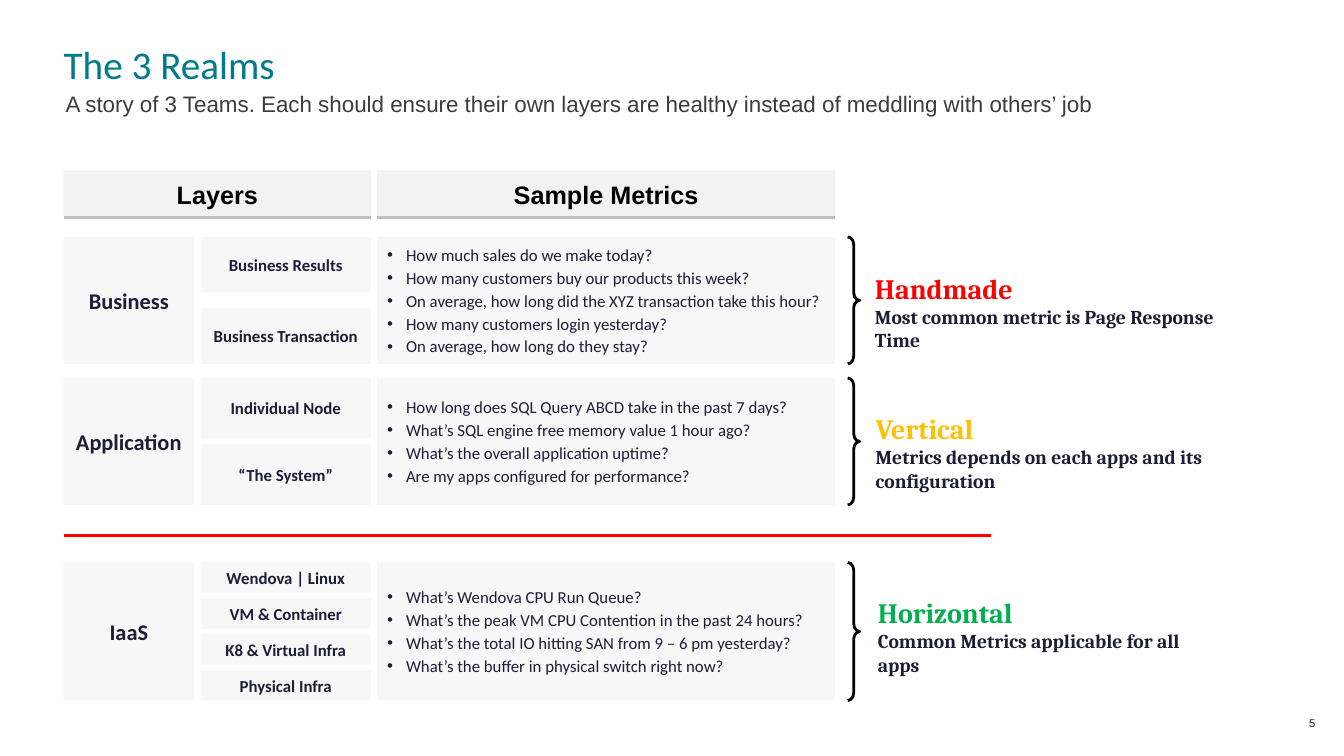
from dataclasses import dataclass

import pptx
import pptx.dml.color
import pptx.enum.shapes
import pptx.enum.text
import pptx.oxml.ns
import pptx.oxml.xmlchemy
import pptx.util
from lxml import etree

Pt = pptx.util.Pt
RGBColor = pptx.dml.color.RGBColor
Shape = pptx.enum.shapes.MSO_SHAPE
Align = pptx.enum.text.PP_ALIGN
Anchor = pptx.enum.text.MSO_ANCHOR
qn = pptx.oxml.ns.qn

INK = RGBColor(0x1B, 0x1E, 0x35)
BLACK = RGBColor(0x00, 0x00, 0x01)
TEAL = RGBColor(0x00, 0x7B, 0x8C)
SLATE = RGBColor(0x3C, 0x3C, 0x3C)
PANEL = RGBColor(0xF2, 0xF2, 0xF2)
RULE = RGBColor(0xBF, 0xBF, 0xBF)
RED = RGBColor(0xFF, 0x00, 0x00)
AMBER = RGBColor(0xFF, 0xC0, 0x00)
GREEN = RGBColor(0x00, 0xB0, 0x50)

# Column positions and widths
REALM_LEFT, REALM_WIDTH = 45.5, 93
LAYER_LEFT, LAYER_WIDTH = 143.3, 121.7
METRIC_LEFT, METRIC_WIDTH = 269.5, 327
BRACE_LEFT, BRACE_WIDTH = 605.5, 8.6
HEADER_TOP, HEADER_HEIGHT = 121.7, 33.8


@dataclass
class Style:
    font: str
    size: float
    color: RGBColor
    bold: bool = False


@dataclass
class Realm:
    name: str
    top: float
    height: float
    layers: list[str]
    layer_height: float
    metrics: list[str]
    approach: str
    color: RGBColor
    note: str
    note_left: float
    note_top: float
    note_width: float


HEADER = Style("Arial", 18, BLACK, True)
REALM = Style("Calibri", 16, INK, True)
LAYER = Style("Calibri", 12, INK, True)
METRIC = Style("Calibri", 12, INK)
NOTE = Style("Cambria", 14, INK, True)

REALMS = [
    Realm("Business", 169.2, 90.7, ["Business Results", "Business Transaction"], 39.6,
          ["How much sales do we make today?",
           "How many customers buy our products this week?",
           "On average, how long did the XYZ transaction take this hour?",
           "How many customers login yesterday?",
           "On average, how long do they stay?"],
          "Handmade", RED, "Most common metric is Page Response Time", 625, 193.7, 269.3),
    Realm("Application", 270, 90.7, ["Individual Node", "“The System”"], 43.2,
          ["How long does SQL Query ABCD take in the past 7 days?",
           "What’s SQL engine free memory value 1 hour ago?",
           "What’s the overall application uptime?",
           "Are my apps configured for performance?"],
          "Vertical", AMBER, "Metrics depends on each apps and its configuration", 625.5, 293.8, 309.6),
    Realm("IaaS", 401.8, 98.6,
          ["Wendova | Linux", "VM & Container", "K8 & Virtual Infra", "Physical Infra"], 21.6,
          ["What’s Wendova CPU Run Queue?",
           "What’s the peak VM CPU Contention in the past 24 hours?",
           "What’s the total IO hitting SAN from 9 – 6 pm yesterday?",
           "What’s the buffer in physical switch right now?"],
          "Horizontal", GREEN, "Common Metrics applicable for all apps", 627.1, 425.5, 242.6),
]


def write(box, lines: list[tuple[str, Style]], align=Align.LEFT, bullets: bool = False) -> None:
    frame = box.text_frame
    frame.word_wrap = True
    for index, (text, style) in enumerate(lines):
        para = frame.paragraphs[0] if index == 0 else frame.add_paragraph()
        para.text = text
        para.alignment = align
        if bullets:
            properties = para._p.get_or_add_pPr()
            properties.set("marL", str(Pt(13.5)))
            properties.set("indent", str(-Pt(13.5)))
            etree.SubElement(properties, qn("a:buFont")).set("typeface", "Arial")
            etree.SubElement(properties, qn("a:buChar")).set("char", "•")
            if index:
                para.space_before = Pt(2)
        para.font.name = style.font
        para.font.size = Pt(style.size)
        para.font.bold = style.bold
        para.font.color.rgb = style.color


def add_text(page, left: float, top: float, width: float, height: float,
             lines: list[tuple[str, Style]], align=Align.LEFT, anchor=Anchor.TOP):
    box = page.shapes.add_textbox(Pt(left), Pt(top), Pt(width), Pt(height))
    frame = box.text_frame
    frame.margin_left = frame.margin_right = frame.margin_top = frame.margin_bottom = 0
    frame.vertical_anchor = anchor
    write(box, lines, align)
    return box


def add_panel(page, left: float, top: float, width: float, height: float, lines: list[str],
              style: Style, opacity: int = 60, bullets: bool = False) -> None:
    box = page.shapes.add_shape(Shape.RECTANGLE, Pt(left), Pt(top), Pt(width), Pt(height))
    box.shadow.inherit = False
    box.line.fill.background()
    box.fill.solid()
    box.fill.fore_color.rgb = PANEL
    if opacity < 100:
        color = box._element.spPr.find(qn("a:solidFill"))[0]
        etree.SubElement(color, qn("a:alpha")).set("val", str(opacity * 1000))
    box.text_frame.vertical_anchor = Anchor.MIDDLE
    write(box, [(line, style) for line in lines], Align.LEFT if bullets else Align.CENTER, bullets)


def add_rule(page, left: float, right: float, height: float, color: RGBColor) -> None:
    rule = page.shapes.add_connector(pptx.enum.shapes.MSO_CONNECTOR.STRAIGHT,
                                     Pt(left), Pt(height), Pt(right), Pt(height))
    rule.line.color.rgb = color
    rule.line.width = Pt(2)
    etree.SubElement(rule._element.spPr, qn("a:effectLst"))


def add_brace(page, top: float, height: float) -> None:
    brace = page.shapes.add_shape(Shape.RIGHT_BRACE, Pt(BRACE_LEFT), Pt(top),
                                  Pt(BRACE_WIDTH), Pt(height))
    brace.shadow.inherit = False
    brace.fill.background()
    brace.line.color.rgb = BLACK
    brace.line.width = Pt(2)
    brace.adjustments[0] = 0.64


def add_realm(page, realm: Realm) -> None:
    add_panel(page, REALM_LEFT, realm.top, REALM_WIDTH, realm.height, [realm.name], REALM)
    # Layers spread evenly over the height of the realm
    pitch = (realm.height - realm.layer_height) / (len(realm.layers) - 1)
    for index, layer in enumerate(realm.layers):
        add_panel(page, LAYER_LEFT, realm.top + index * pitch, LAYER_WIDTH,
                  realm.layer_height, [layer], LAYER)
    add_panel(page, METRIC_LEFT, realm.top, METRIC_WIDTH, realm.height,
              realm.metrics, METRIC, bullets=True)
    add_brace(page, realm.top, realm.height)
    add_text(page, realm.note_left, realm.note_top, realm.note_width, 41,
             [(realm.approach, Style("Cambria", 20, realm.color, True)), (realm.note, NOTE)])


def main() -> None:
    deck = pptx.Presentation()
    deck.slide_width, deck.slide_height = Pt(960), Pt(540)
    page = deck.slides.add_slide(deck.slide_layouts[6])

    # Title, subtitle and page number
    title = add_text(page, 45.5, 32.4, 866, 30.2,
                     [("The 3 Realms", Style("Calibri", 28, TEAL))], anchor=Anchor.BOTTOM)
    title.text_frame.paragraphs[0].line_spacing = 0.9
    add_text(page, 46.8, 64.1, 863, 19.4,
             [("A story of 3 Teams. Each should ensure their own layers are healthy "
               "instead of meddling with others’ job", Style("Arial", 16, SLATE))])
    add_text(page, 905, 509, 34.6, 14.4, [("5", Style("Arial", 8, INK))],
             Align.RIGHT, Anchor.MIDDLE)

    # Column headers
    layers_width = LAYER_LEFT + LAYER_WIDTH - REALM_LEFT
    for heading, left, width in [("Layers", REALM_LEFT, layers_width),
                                 ("Sample Metrics", METRIC_LEFT, METRIC_WIDTH)]:
        add_panel(page, left, HEADER_TOP, width, HEADER_HEIGHT, [heading], HEADER, opacity=100)
        add_rule(page, left, left + width, HEADER_TOP + HEADER_HEIGHT, RULE)

    # Realms, with a divider above the infrastructure
    for realm in REALMS:
        add_realm(page, realm)
    add_rule(page, REALM_LEFT, 708, 382.3, RED)

    deck.save("out.pptx")


if __name__ == "__main__":
    main()
